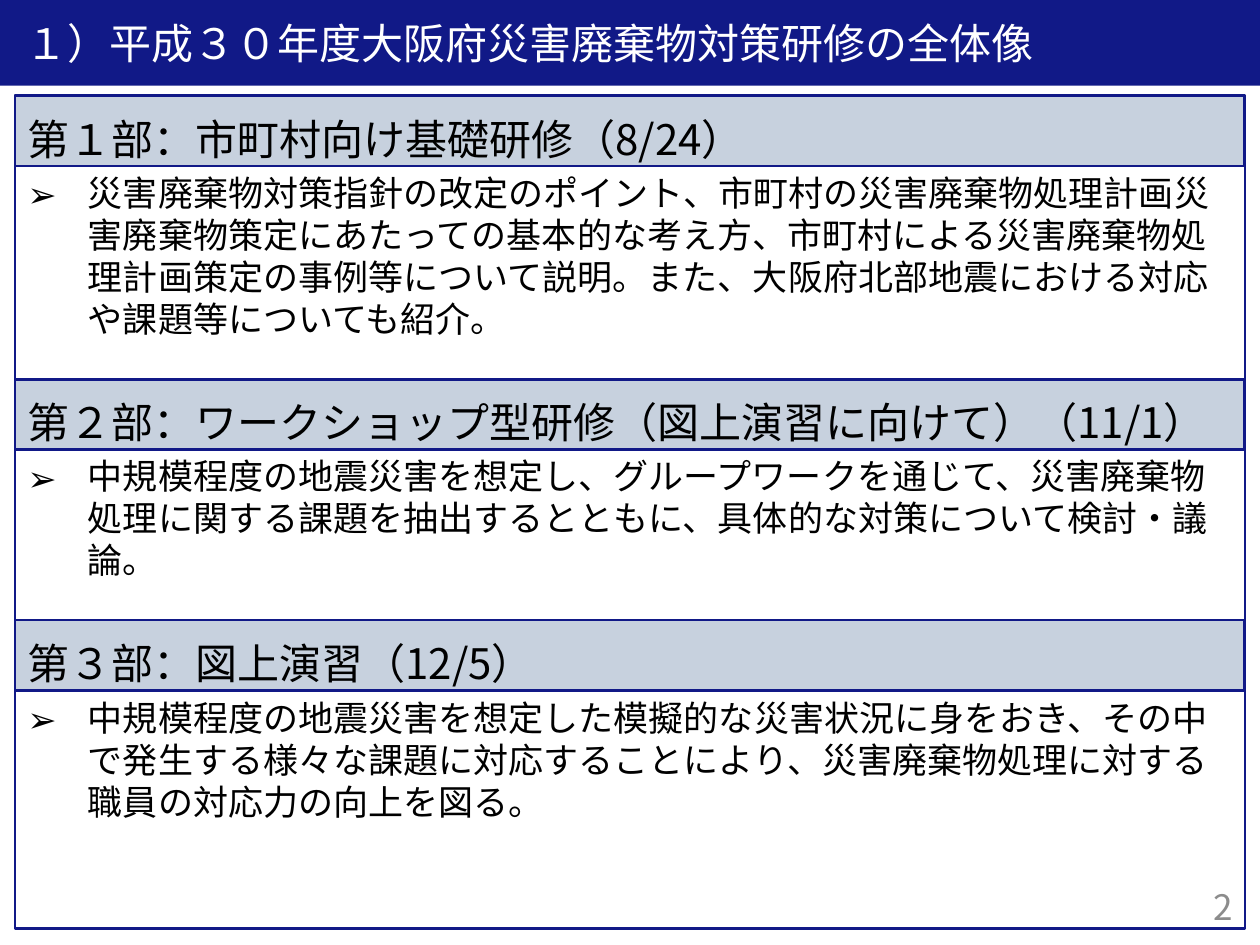
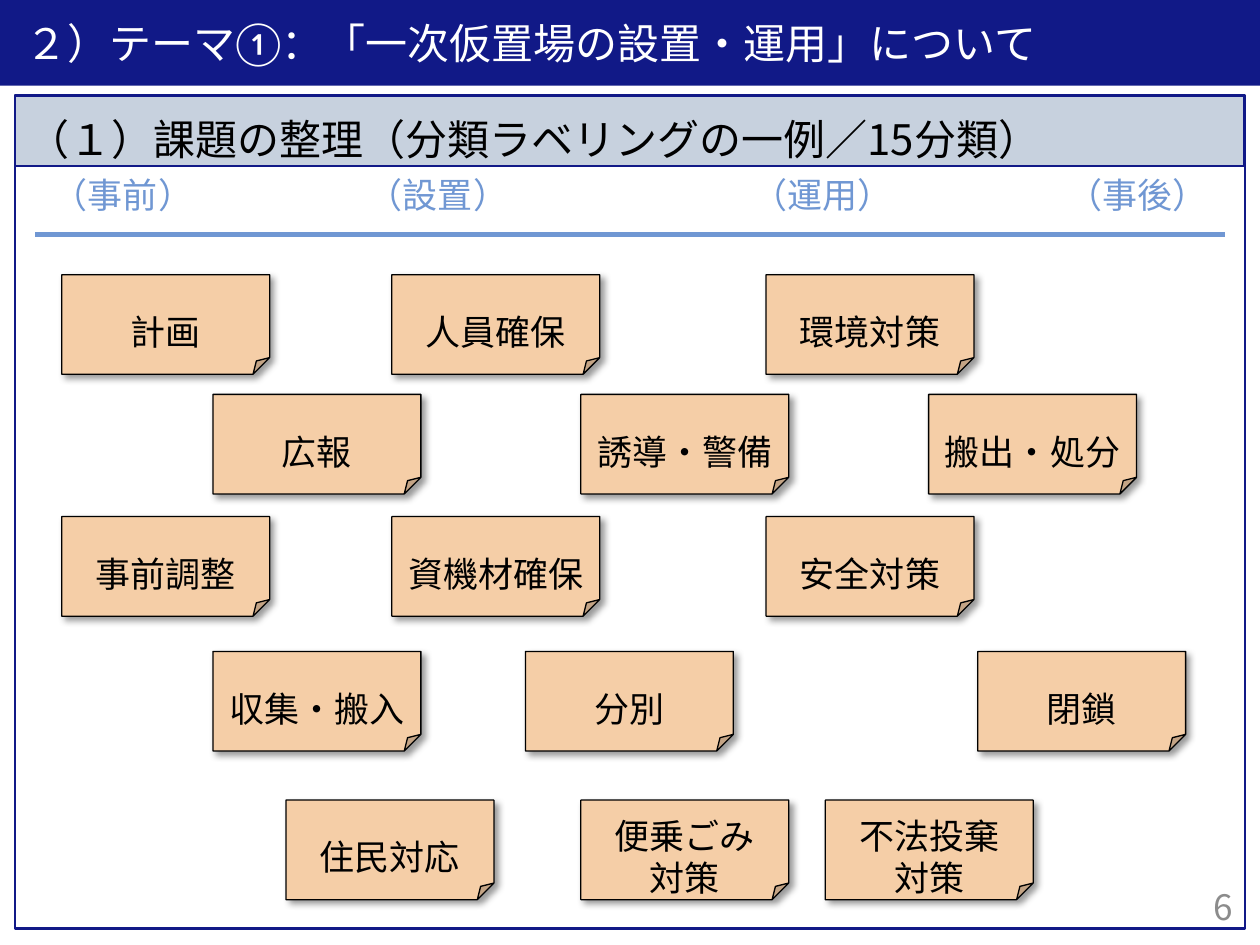
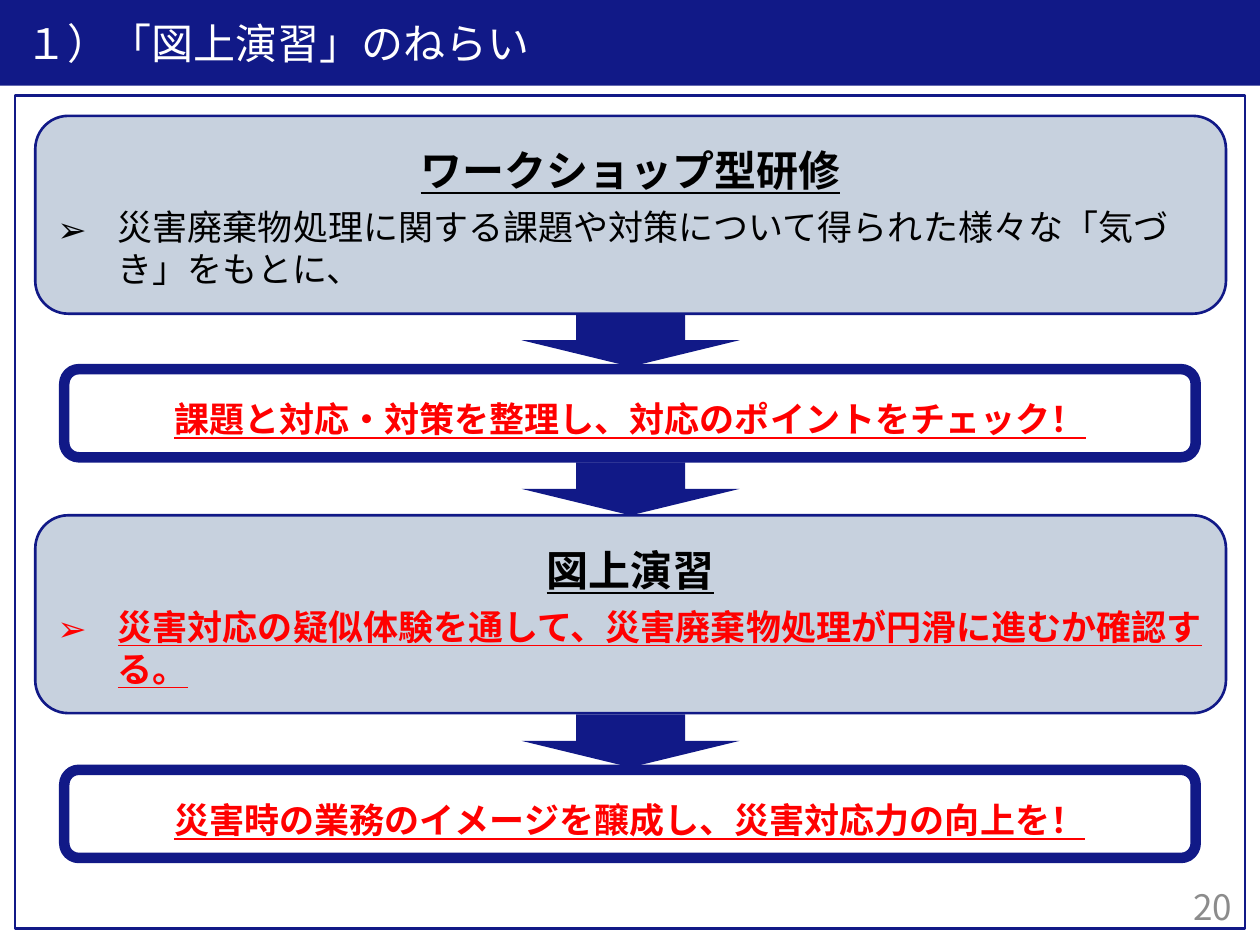
"""Build three slides on disaster waste training with shared bands and frames."""
from dataclasses import dataclass
from typing import Any, Optional

from lxml.etree import SubElement
from pptx import Presentation
from pptx.dml.color import RGBColor
from pptx.enum.shapes import MSO_CONNECTOR as Connector, MSO_SHAPE as Preset
from pptx.enum.text import MSO_ANCHOR as Anchor, PP_ALIGN as Align
from pptx.oxml.ns import qn
from pptx.shapes.autoshape import Shape
from pptx.slide import Slide
from pptx.util import Inches, Pt

COLORS = {
    "navy": "111987", "band": "C7D1DE", "white": "FFFFFF", "black": "000000",
    "page": "8C8C8C", "phase": "7097D3", "note": "F5CEA7", "alert": "FF0000",
}
BODY_FONT, TITLE_FONT = "Noto Sans CJK JP", "Lato"
LINE_RATIO = 1.2
BULLET_INDENT = 0.48
FRAME_LEFT, FRAME_TOP, FRAME_WIDTH, FRAME_HEIGHT = 0.12, 0.76, 9.76, 6.61
PHASE_TABS = (2.5, 5.55, 8.05)
NOTE_WIDTH, NOTE_HEIGHT = 1.65, 0.79
MARGINS = ("margin_left", "margin_top", "margin_right", "margin_bottom")


@dataclass(frozen=True)
class Line:
    """One paragraph with its format."""
    text: str
    size: int = 20
    color: str = "black"
    font: str = BODY_FONT
    strong: bool = False
    align: Align = Align.LEFT
    before: int = 0
    bullet: bool = False
    tabs: tuple[float, ...] = ()


@dataclass(frozen=True)
class Style:
    """Outline, fill and text area of a kind of shape."""
    preset: Preset
    fill: Optional[str] = None
    line: Optional[str] = None
    weight: float = 1.5
    insets: tuple[float, ...] = (0.1, 0.09, 0.1, 0.05)
    anchor: Anchor = Anchor.MIDDLE
    wrap: bool = True


TITLE = Style(Preset.RECTANGLE, "navy", insets=(0.2, 0.05, 0.1, 0.05))
HEADING = Style(Preset.RECTANGLE, "band", "navy", insets=(0.1, 0.14, 0.1, 0.02))
NOTE = Style(Preset.FOLDED_CORNER, "note", "black", 0.75, (0.04, 0.24, 0.04, 0), wrap=False)
PANEL = Style(Preset.ROUNDED_RECTANGLE, "band", "navy")
BANNER = Style(Preset.ROUNDED_RECTANGLE, "white", "navy", 6, (0.1, 0.09, 0.1, 0))
ARROW = Style(Preset.DOWN_ARROW, "navy")
PAGE_INSETS = (0.1, 0.07, 0.1, 0.03)


def rgb(name: str) -> RGBColor:
    """Return a named colour."""
    return RGBColor.from_string(COLORS[name])


def apply(target: Any, values: dict[str, Any]) -> None:
    """Set each value as an attribute of the target."""
    for name, value in values.items():
        setattr(target, name, value)


def write(shape: Shape, lines: list[Line], insets: tuple[float, ...],
          anchor: Anchor, wrap: bool = True) -> None:
    """Fill the text frame of a shape with paragraphs."""
    frame = shape.text_frame
    apply(frame, dict(zip(MARGINS, map(Inches, insets))))
    apply(frame, {"vertical_anchor": anchor, "word_wrap": wrap})
    for index, line in enumerate(lines):
        paragraph = frame.add_paragraph() if index else frame.paragraphs[0]
        properties = paragraph._p.get_or_add_pPr()
        if line.bullet:
            properties.set("marL", str(Inches(BULLET_INDENT)))
            properties.set("indent", str(-Inches(BULLET_INDENT)))
            SubElement(properties, qn("a:buFont"), typeface=line.font)
            SubElement(properties, qn("a:buChar"), char="➢")
        if line.tabs:
            tab_list = SubElement(properties, qn("a:tabLst"))
            for position in line.tabs:
                SubElement(tab_list, qn("a:tab"), pos=str(Inches(position)), algn="l")
        paragraph.alignment = line.align
        if line.font == BODY_FONT:
            paragraph.line_spacing = Pt(line.size * LINE_RATIO)
        if line.before:
            paragraph.space_before = Pt(line.before)
        run = paragraph.add_run()
        run.text = line.text
        apply(run.font, {"name": line.font, "size": Pt(line.size),
                         "bold": line.strong, "underline": line.strong})
        run.font.color.rgb = rgb(line.color)
        SubElement(run._r.get_or_add_rPr(), qn("a:ea"), typeface=line.font)


def add_box(slide: Slide, style: Style, left: float, top: float, width: float,
            height: float, lines: Optional[list[Line]] = None) -> Shape:
    """Draw a preset shape in a style, with optional text."""
    shape = slide.shapes.add_shape(
        style.preset, Inches(left), Inches(top), Inches(width), Inches(height))
    shape.shadow.inherit = False
    if style.fill:
        shape.fill.solid()
        shape.fill.fore_color.rgb = rgb(style.fill)
    else:
        shape.fill.background()
    if style.line:
        shape.line.color.rgb = rgb(style.line)
        shape.line.width = Pt(style.weight)
    else:
        shape.line.fill.background()
    if lines:
        write(shape, lines, style.insets, style.anchor, style.wrap)
    return shape


def add_base(presentation: Any, title: str, page: int, lines: Optional[list[Line]] = None,
             insets: tuple[float, ...] = (0.1, 0.1, 0.1, 0.1)) -> Slide:
    """Add a slide with its frame, title band and page number."""
    slide = presentation.slides.add_slide(presentation.slide_layouts[6])
    style = Style(Preset.ROUNDED_RECTANGLE, None, "navy", insets=insets, anchor=Anchor.TOP)
    frame = add_box(slide, style, FRAME_LEFT, FRAME_TOP, FRAME_WIDTH, FRAME_HEIGHT, lines)
    frame.adjustments[0] = 0
    add_box(slide, TITLE, 0, 0, 10, 0.68, [Line(title, 24, "white", TITLE_FONT)])
    number = slide.shapes.add_textbox(Inches(9.25), Inches(6.98), Inches(0.63), Inches(0.39))
    write(number, [Line(str(page), color="page", align=Align.RIGHT)], PAGE_INSETS, Anchor.MIDDLE)
    return slide


def add_heading(slide: Slide, top: float, text: str) -> None:
    """Draw a section heading across the frame."""
    add_box(slide, HEADING, FRAME_LEFT, top, FRAME_WIDTH, 0.56, [Line(text, 24)])


def add_note(slide: Slide, left: float, top: float, text: str) -> None:
    """Draw a sticky note with a soft shadow."""
    lines = [Line(part, align=Align.CENTER) for part in text.split("\n")]
    note = add_box(slide, NOTE, left, top, NOTE_WIDTH, NOTE_HEIGHT, lines)
    effects = note._element.spPr.find(qn("a:effectLst"))
    shadow = SubElement(effects, qn("a:outerShdw"), blurRad=str(Pt(4)), dist=str(Pt(3)),
                        dir="2700000", algn="tl", rotWithShape="0")
    color = SubElement(shadow, qn("a:srgbClr"), val=COLORS["black"])
    SubElement(color, qn("a:alpha"), val="40000")


def build_overview(presentation: Any) -> None:
    """Build the overview of the three training parts."""
    summaries = (
        "災害廃棄物対策指針の改定のポイント、市町村の災害廃棄物処理計画災害廃棄物策定にあたっての"
        "基本的な考え方、市町村による災害廃棄物処理計画策定の事例等について説明。"
        "また、大阪府北部地震における対応や課題等についても紹介。",
        "中規模程度の地震災害を想定し、グループワークを通じて、災害廃棄物処理に関する課題を"
        "抽出するとともに、具体的な対策について検討・議論。",
        "中規模程度の地震災害を想定した模擬的な災害状況に身をおき、その中で発生する様々な課題に"
        "対応することにより、災害廃棄物処理に対する職員の対応力の向上を図る。",
    )
    lines = [Line(text, bullet=True, before=66 if index else 0)
             for index, text in enumerate(summaries)]
    slide = add_base(presentation, "１）平成３０年度大阪府災害廃棄物対策研修の全体像", 2,
                     lines, (0.1, 0.6, 0.1, 0.1))
    headings = {
        FRAME_TOP: "第１部：市町村向け基礎研修（8/24）",
        3.01: "第２部：ワークショップ型研修（図上演習に向けて）（11/1）",
        4.92: "第３部：図上演習（12/5）",
    }
    for top, text in headings.items():
        add_heading(slide, top, text)


def build_issues(presentation: Any) -> None:
    """Build the board of issue labels along the phases."""
    phases = Line("（事前）\t（設置）\t（運用）\t（事後）", color="phase", tabs=PHASE_TABS)
    slide = add_base(presentation, "２）テーマ①：「一次仮置場の設置・運用」について", 6,
                     [phases], (0.3, 0.62, 0.1, 0.1))
    add_heading(slide, FRAME_TOP, "（１）課題の整理（分類ラベリングの一例／15分類）")
    axis = slide.shapes.add_connector(
        Connector.STRAIGHT, Inches(0.28), Inches(1.86), Inches(9.72), Inches(1.86))
    axis.line.color.rgb = rgb("phase")
    axis.line.width = Pt(3)
    SubElement(axis._element.spPr, qn("a:effectLst"))
    rows = {
        2.18: {0.49: "計画", 3.11: "人員確保", 6.08: "環境対策"},
        3.13: {1.69: "広報", 4.61: "誘導・警備", 7.37: "搬出・処分"},
        4.1: {0.49: "事前調整", 3.11: "資機材確保", 6.08: "安全対策"},
        5.17: {1.69: "収集・搬入", 4.17: "分別", 7.76: "閉鎖"},
        6.35: {2.27: "住民対応", 4.61: "便乗ごみ\n対策", 6.55: "不法投棄\n対策"},
    }
    for top, notes in rows.items():
        for left, text in notes.items():
            add_note(slide, left, top, text)


def build_aims(presentation: Any) -> None:
    """Build the flow from the workshop to the exercise."""
    slide = add_base(presentation, "１）「図上演習」のねらい", 20)
    for top in (2.49, 3.67, 5.67):
        add_box(slide, ARROW, 4.14, top, 1.73, 0.42)
    panels = {
        0.92: ("ワークショップ型研修", Line(
            "災害廃棄物処理に関する課題や対策について得られた様々な「気づき」をもとに、",
            before=6, bullet=True)),
        4.09: ("図上演習", Line(
            "災害対応の疑似体験を通して、災害廃棄物処理が円滑に進むか確認する。",
            color="alert", strong=True, before=6, bullet=True)),
    }
    for top, (name, detail) in panels.items():
        heading = Line(name, 24, strong=True, align=Align.CENTER)
        add_box(slide, PANEL, 0.28, top, 9.45, 1.57, [heading, detail])
    banners = {
        2.93: "課題と対応・対策を整理し、対応のポイントをチェック！",
        6.11: "災害時の業務のイメージを醸成し、災害対応力の向上を！",
    }
    for top, text in banners.items():
        goal = Line(text, color="alert", strong=True, align=Align.CENTER)
        add_box(slide, BANNER, 0.51, top, 8.98, 0.7, [goal])


def main() -> None:
    """Build and save the presentation."""
    presentation = Presentation()
    apply(presentation, {"slide_width": Inches(10), "slide_height": Inches(7.5)})
    for build in (build_overview, build_issues, build_aims):
        build(presentation)
    presentation.save("out.pptx")


if __name__ == "__main__":
    main()
